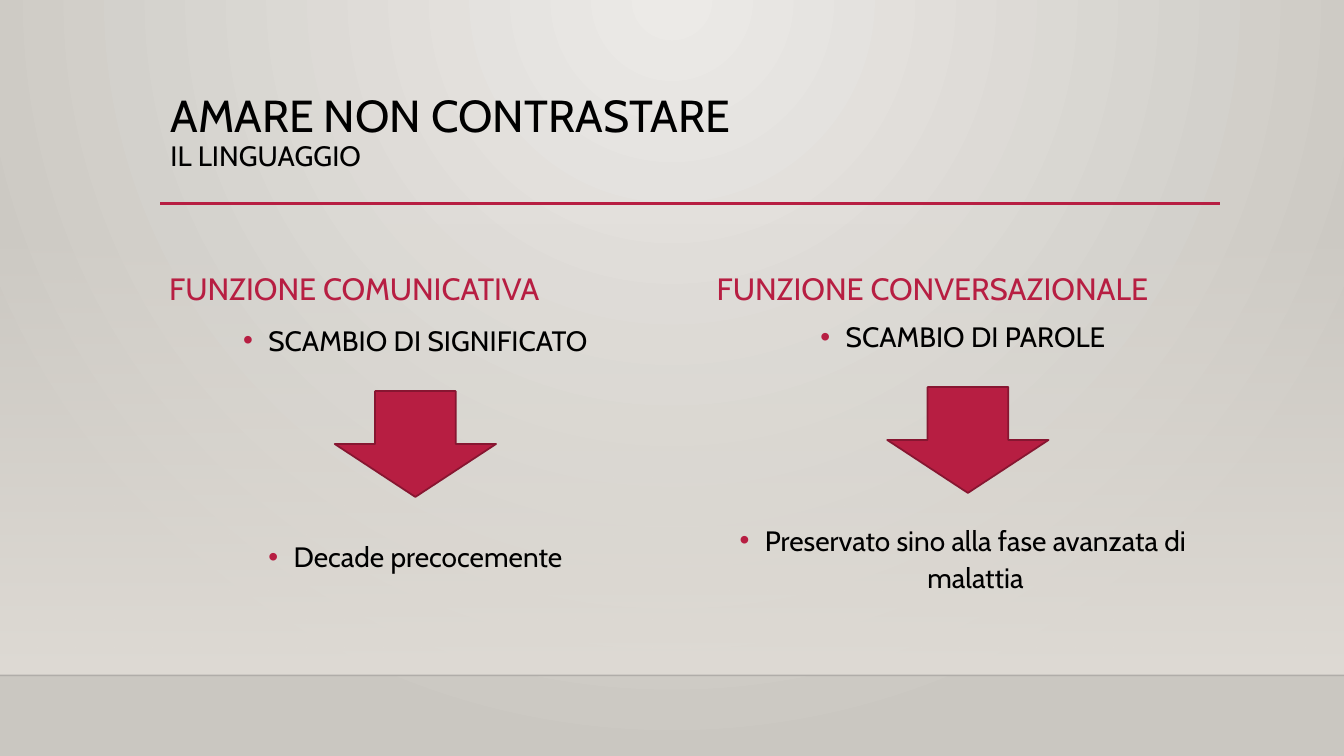
from lxml.etree import SubElement
from pptx import Presentation
from pptx.dml.color import RGBColor
from pptx.enum.shapes import MSO_CONNECTOR, MSO_SHAPE
from pptx.enum.text import MSO_ANCHOR, MSO_AUTO_SIZE, PP_ALIGN
from pptx.oxml.ns import qn
from pptx.util import Inches, Pt

FONT = "Cabin"
RED = "B71E42"
BLACK = "000000"


def color(text):
    return RGBColor.from_string(text)


def style(run, size, tone):
    run.font.name = FONT
    run.font.size = Pt(size)
    run.font.color.rgb = color(tone)


def set_alpha(node, percent):
    SubElement(node, qn("a:alpha"), val=str(percent * 1000))


def set_stops(fill, tones):
    fill.gradient()
    for stop, tone in zip(fill.gradient_stops, tones):
        stop.color.rgb = color(tone)
    for pos, stop in enumerate(fill.gradient_stops):
        stop.position = pos


def paint_back(slide):
    set_stops(slide.background.fill, ["ECEAE7", "CAC7C1"])
    grad = next(slide.element.iter(qn("a:gradFill")))
    for lin in grad.findall(qn("a:lin")):
        grad.remove(lin)
    circle = SubElement(grad, qn("a:path"), {"path": "circle"})
    SubElement(circle, qn("a:fillToRect"),
               l="43000", t="0", r="43000", b="100000")


def add_fade(slide):
    """Panel that turns from clear at its top to solid at its foot."""
    fade = slide.shapes.add_shape(MSO_SHAPE.RECTANGLE, 0, Inches(2.21),
                                  Inches(13.33), Inches(4.49))
    fade.shadow.inherit = False
    fade.line.fill.background()
    set_stops(fade.fill, ["DFDBD5", "DFDBD5"])
    fade.fill.gradient_angle = 270
    set_alpha(next(fade.element.iter(qn("a:srgbClr"))), 0)


def add_rule(slide, left, right, y, tone, width):
    rule = slide.shapes.add_connector(MSO_CONNECTOR.STRAIGHT, Inches(left),
                                      Inches(y), Inches(right), Inches(y))
    rule.line.color.rgb = color(tone)
    rule.line.width = Pt(width)
    SubElement(rule.element.spPr, qn("a:effectLst"))
    return rule


def set_title(slide, head, sub):
    title = slide.shapes.title
    title.left, title.top = Inches(1.59), Inches(0.88)
    title.width, title.height = Inches(10.5), Inches(1.15)
    frame = title.text_frame
    frame.auto_size = MSO_AUTO_SIZE.NONE
    frame.vertical_anchor = MSO_ANCHOR.TOP
    para = frame.paragraphs[0]
    para.text = f"{head}\v{sub}"
    para.alignment = PP_ALIGN.LEFT
    para.line_spacing = 0.9
    for run, size in zip(para.runs, (32, 20)):
        style(run, size, BLACK)
    for stop in title.element.iter(qn("a:br")):
        SubElement(stop, qn("a:rPr"), sz="3200")


def add_box(slide, left, top, height, lines, size, tone):
    box = slide.shapes.add_textbox(Inches(left), Inches(top),
                                   Inches(5.08), Inches(height))
    frame = box.text_frame
    frame.word_wrap = True
    frame.text = "\n".join(lines)
    for para in frame.paragraphs:
        style(para.runs[0], size, tone)
    return frame


def add_bullet(para):
    props = para._p.get_or_add_pPr()
    props.set("marL", str(Inches(0.25)))
    props.set("indent", str(-Inches(0.25)))
    tint = SubElement(props, qn("a:buClr"))
    SubElement(tint, qn("a:srgbClr"), val=RED)
    SubElement(props, qn("a:buFont"), typeface="Arial")
    SubElement(props, qn("a:buChar"), char="•")


def add_arrow(slide, left, top):
    arrow = slide.shapes.add_shape(MSO_SHAPE.DOWN_ARROW, Inches(left),
                                   Inches(top), Inches(1.6), Inches(1.05))
    arrow.shadow.inherit = False
    arrow.fill.solid()
    arrow.fill.fore_color.rgb = color(RED)
    arrow.line.color.rgb = color("871631")
    arrow.line.width = Pt(1.25)


def add_column(slide, left, head, lines, spacing, gap):
    """Heading over two bullets, with a gap between them for the arrow."""
    frame = add_box(slide, left, 2.21, 0.88, [head], 22, RED)
    frame.vertical_anchor = MSO_ANCHOR.BOTTOM
    frame = add_box(slide, left, 3.09, 2.88, lines, 20, BLACK)
    for para in frame.paragraphs:
        add_bullet(para)
        para.alignment = PP_ALIGN.CENTER
        para.line_spacing = spacing
    frame.paragraphs[1].space_before = Pt(gap)


def main():
    deck = Presentation()
    deck.slide_width, deck.slide_height = Inches(13.33), Inches(7.5)
    slide = deck.slides.add_slide(deck.slide_layouts[5])
    paint_back(slide)
    add_fade(slide)
    floor = add_rule(slide, 0, 13.33, 6.7, "000001", 1)
    set_alpha(next(floor.element.iter(qn("a:srgbClr"))), 20)
    add_rule(slide, 1.59, 12.1, 2.02, RED, 2.5)
    set_title(slide, "AMARE NON CONTRASTARE", "IL LINGUAGGIO")
    add_column(slide, 1.58, "FUNZIONE COMUNICATIVA",
               ["SCAMBIO DI SIGNIFICATO", "Decade precocemente"], 1.2, 126)
    add_column(slide, 7.01, "FUNZIONE CONVERSAZIONALE",
               ["SCAMBIO DI PAROLE",
                "Preservato sino alla fase avanzata di malattia"], 1.1, 119)
    add_arrow(slide, 3.32, 3.88)
    add_arrow(slide, 8.8, 3.84)
    deck.save("out.pptx")


if __name__ == "__main__":
    main()
